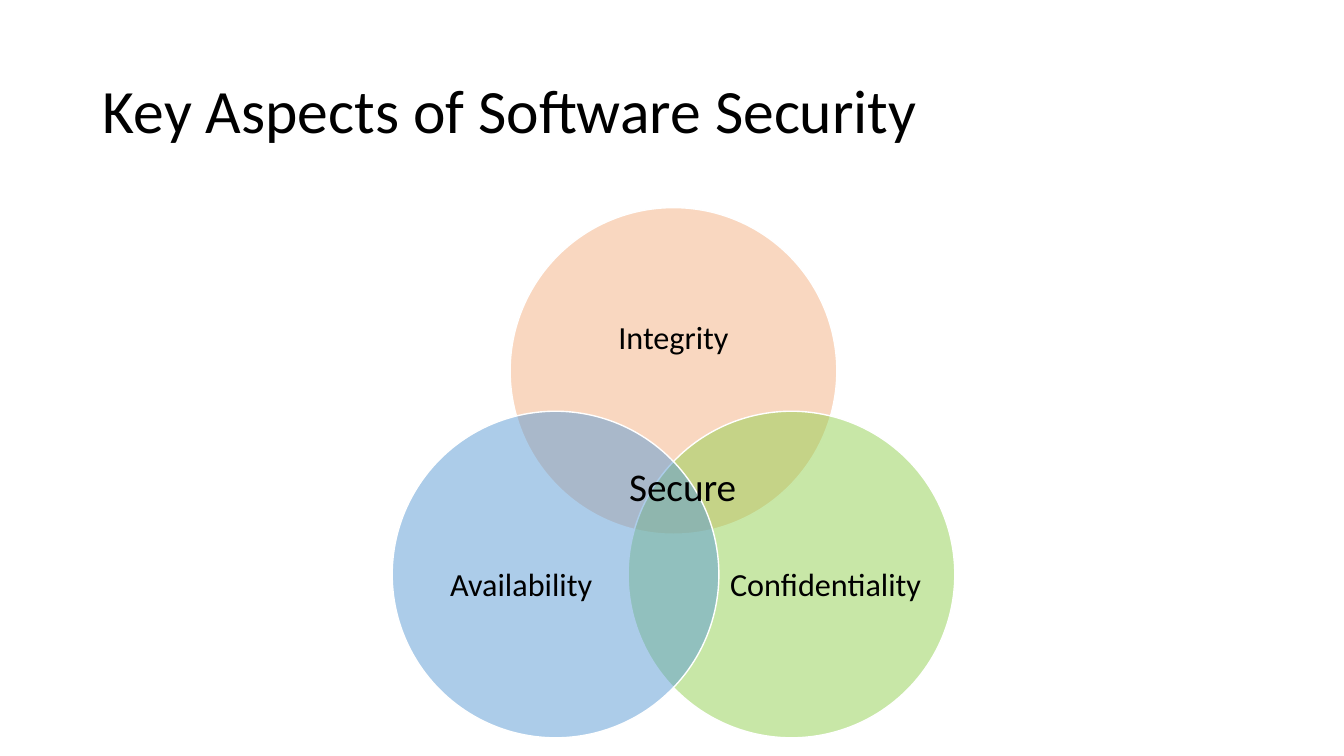
from math import cos, radians, sin

from lxml import etree
from pptx import Presentation
from pptx.dml.color import RGBColor
from pptx.enum.shapes import MSO_SHAPE
from pptx.enum.text import MSO_ANCHOR, MSO_AUTO_SIZE, PP_ALIGN
from pptx.oxml.ns import qn
from pptx.util import Emu, Pt

OVAL = MSO_SHAPE.OVAL
MIDDLE = MSO_ANCHOR.MIDDLE
NONE, GROW = MSO_AUTO_SIZE.NONE, MSO_AUTO_SIZE.SHAPE_TO_FIT_TEXT
LEFT, CENTER = PP_ALIGN.LEFT, PP_ALIGN.CENTER

THEME = {
    "font": "Calibri", "ink": "000000", "edge": "FFFFFF",
    "peach": "F4B183", "green": "92D050", "blue": "5B9BD5",
    "title": 44, "label": 23, "core": 28,
}
SCALE = 9144  # EMU in one px, 100 px to the inch


def px(*nums):
    return [Emu(round(n) * SCALE) for n in nums]


def write(frame, text, size, align, space):
    para = frame.paragraphs[0]
    para.alignment = align
    para.line_spacing = space
    run = para.add_run()
    run.text = text
    run.font.name = THEME["font"]
    run.font.size = Pt(THEME[size])
    run.font.color.rgb = RGBColor.from_string(THEME["ink"])


# Slide
deck = Presentation()
deck.slide_width, deck.slide_height = px(1333, 750)
slide = deck.slides.add_slide(deck.slide_layouts[5])

# Title
title = slide.shapes.title
title.left, title.top, title.width, title.height = px(92, 40, 1150, 145)
title.text_frame.auto_size = NONE
title.text_frame.vertical_anchor = MIDDLE
write(title.text_frame, "Key Aspects of Software Security", "title", LEFT, 0.9)

# Venn circles, spaced evenly around one centre
MID_X, MID_Y, REACH, SIZE = 668, 503, 135, 324
ASPECTS = [
    ("Integrity", "peach", (549, 263, 238, 146)),
    ("Confidentiality", "green", (722, 492, 194, 178)),
    ("Availability", "blue", (420, 492, 194, 178)),
]
venn = slide.shapes.add_group_shape()
for i, (name, color, area) in enumerate(ASPECTS):
    angle = radians(120 * i - 90)
    left = MID_X + REACH * cos(angle) - SIZE / 2
    top = MID_Y + REACH * sin(angle) - SIZE / 2
    disc = venn.shapes.add_shape(OVAL, *px(left, top, SIZE, SIZE))
    disc.shadow.inherit = False
    disc.fill.solid()
    disc.fill.fore_color.rgb = RGBColor.from_string(THEME[color])
    disc.line.color.rgb = RGBColor.from_string(THEME["edge"])
    disc.line.width = Pt(1)

    # Half transparent fill
    tint = disc.fill._xPr.find(qn("a:solidFill"))[0]
    etree.SubElement(tint, qn("a:alpha")).set("val", "50000")

    # Label
    frame = venn.shapes.add_textbox(*px(*area)).text_frame
    frame.word_wrap = True
    frame.vertical_anchor = MIDDLE
    frame.margin_left = frame.margin_right = 0
    frame.margin_top = frame.margin_bottom = 0
    write(frame, name, "label", CENTER, 0.9)

# Shared core
core = slide.shapes.add_textbox(*px(614, 454, 128, 57)).text_frame
core.word_wrap = False
core.auto_size = GROW
write(core, "Secure", "core", LEFT, 1.0)

deck.save("out.pptx")
